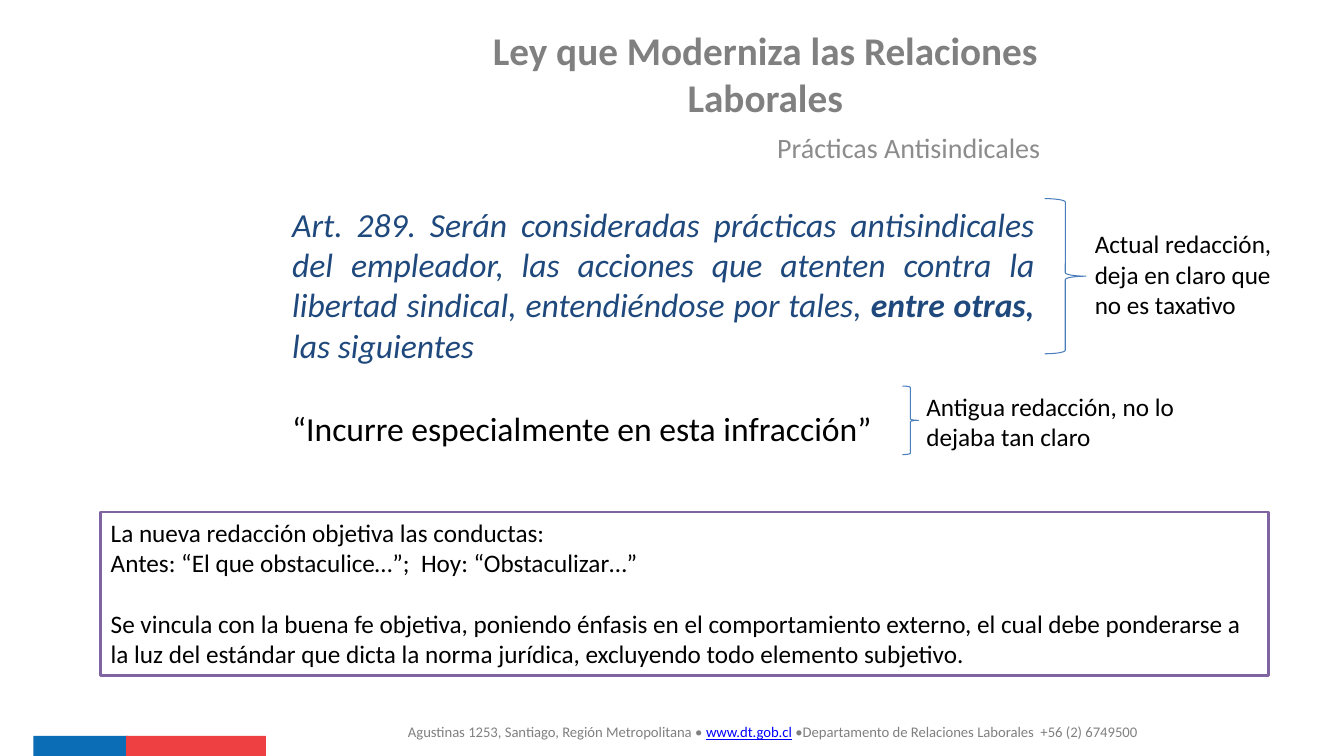
from pptx import Presentation
from pptx import util as u
from pptx.dml.color import RGBColor
from pptx.enum import shapes, text

COLOURS = {
    "white": "FFFFFF", "black": "000000", "grey": "808080", "light grey": "8C8C8C",
    "navy": "1F497D", "link": "0000FF", "blue": "0B6DB5", "red": "EE4043",
    "purple": "8064A2", "brace": "4B7EBC",
}
SHAPE, ALIGN, ANCHOR = shapes.MSO_SHAPE, text.PP_ALIGN, text.MSO_ANCHOR

presentation = Presentation()
presentation.slide_width = u.Inches(13.33)
presentation.slide_height = u.Inches(7.5)
slide = presentation.slides.add_slide(presentation.slide_layouts[6])
slide.background.fill.solid()
slide.background.fill.fore_color.rgb = RGBColor.from_string(COLOURS["white"])


def add_preset(kind, area, fill=None, line=None, weight=0.75):
    """Add a shape; area is left, top, width, height in percent of the slide."""
    sides = (presentation.slide_width, presentation.slide_height) * 2
    shape = slide.shapes.add_shape(kind, *(int(side * share / 100) for side, share in zip(sides, area)))
    shape.shadow.inherit = False
    if fill:
        shape.fill.solid()
        shape.fill.fore_color.rgb = RGBColor.from_string(COLOURS[fill])
    else:
        shape.fill.background()
    if line:
        shape.line.color.rgb = RGBColor.from_string(COLOURS[line])
        shape.line.width = u.Pt(weight)
    else:
        shape.line.fill.background()
    return shape


def write(shape, paragraphs, size, colour, align=ALIGN.LEFT, anchor=ANCHOR.TOP):
    """Fill a shape with paragraphs, each a list of run texts."""
    frame = shape.text_frame
    frame.word_wrap = True
    frame.vertical_anchor = anchor
    for index, pieces in enumerate(paragraphs):
        paragraph = frame.add_paragraph() if index else frame.paragraphs[0]
        paragraph.alignment = align
        for piece in pieces:
            run = paragraph.add_run()
            run.text = piece
            run.font.name = "Calibri"
            run.font.size = u.Pt(size)
            run.font.color.rgb = RGBColor.from_string(COLOURS[colour])
    return frame.paragraphs


# Footer
for colour, left, width in (("blue", 2.48, 7.05), ("red", 9.38, 10.4)):
    add_preset(SHAPE.RECTANGLE, (left, 97.33, width, 2.67), fill=colour)

footer = slide.shapes.add_textbox(0, 0, 0, 0)
footer.left, footer.width = (int(presentation.slide_width * share) for share in (0.19, 0.77))
footer.top, footer.height = (int(presentation.slide_height * share) for share in (0.95, 0.04))
address = write(footer, [[
    "Agustinas 1253, Santiago, Región Metropolitana • ",
    "www.dt.gob.cl",
    " •Departamento de Relaciones Laborales  +56 (2) 6749500",
]], 10.5, "grey", ALIGN.CENTER)[0]
website = address.runs[1].font
website.underline = True
website.color.rgb = RGBColor.from_string(COLOURS["link"])

# Headings
title = add_preset(SHAPE.RECTANGLE, (30.08, 4, 53.71, 11.33))
heading = write(title, [["Ley que Moderniza las Relaciones Laborales"]], 28, "grey", ALIGN.CENTER, ANCHOR.MIDDLE)
heading[0].runs[0].font.bold = True
subtitle = add_preset(SHAPE.RECTANGLE, (57.09, 16.4, 26.63, 6.27))
write(subtitle, [["Prácticas Antisindicales"]], 20, "light grey", anchor=ANCHOR.MIDDLE)

# Current and former wording of the article
article = add_preset(SHAPE.RECTANGLE, (21, 26.27, 56.71, 22.93))
article_runs = write(article, [[
    "Art. 289. Serán consideradas prácticas antisindicales del empleador, las acciones que atenten "
    "contra la libertad sindical, entendiéndose por tales, ",
    "entre otras,",
    " las siguientes",
]], 24, "navy", ALIGN.JUSTIFY)[0].runs
for run in article_runs:
    run.font.italic = True
article_runs[1].font.bold = True

former = add_preset(SHAPE.RECTANGLE, (21, 53.33, 52.29, 6.67))
write(former, [["“Incurre especialmente en esta infracción”"]], 24, "black")

for brace_area, note_area, note in (
    ((77.72, 26.27, 3.08, 20.53), (80.72, 29.6, 14.78, 13.47),
     "Actual redacción, deja en claro que no es taxativo"),
    ((67.14, 51.07, 1.2, 9.07), (68.19, 51.07, 20.48, 9.47),
     "Antigua redacción, no lo dejaba tan claro"),
):
    add_preset(SHAPE.RIGHT_BRACE, brace_area, line="brace")
    write(add_preset(SHAPE.RECTANGLE, note_area), [[note]], 18, "black")

# Conclusion
conclusion = add_preset(SHAPE.RECTANGLE, (7.5, 67.73, 86.87, 21.6), "white", "purple", 2)
conclusion_paragraphs = write(conclusion, [
    ["La nueva redacción objetiva las conductas:"],
    ["Antes: “El que obstaculice…”;  Hoy: “Obstaculizar…”"],
    ["Se vincula con la buena fe objetiva, poniendo énfasis en el comportamiento externo, el cual debe "
     "ponderarse a la luz del estándar que dicta la norma jurídica, excluyendo todo elemento subjetivo."],
], 18, "black")
conclusion_paragraphs[2].space_before = u.Pt(22)

presentation.save("out.pptx")
